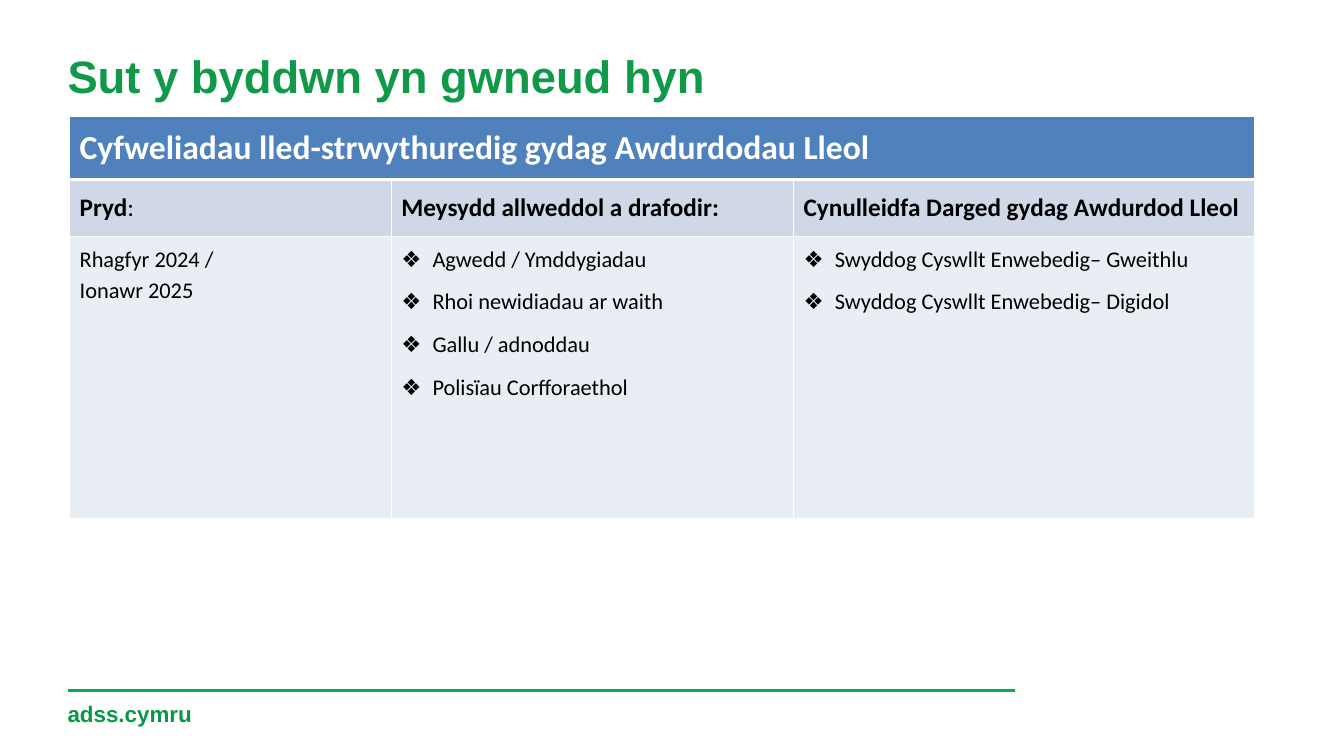
from lxml import etree
from pptx import Presentation
from pptx.dml.color import RGBColor
from pptx.enum.shapes import MSO_CONNECTOR
from pptx.enum.text import MSO_ANCHOR
from pptx.oxml.ns import qn
from pptx.util import Pt

PX = 9144  # 100 px to the inch
STRAIGHT = MSO_CONNECTOR.STRAIGHT
TOP, MIDDLE = MSO_ANCHOR.TOP, MSO_ANCHOR.MIDDLE
COLORS = {
    "title": "109949", "footer": "089948", "rule": "00B050",
    "header": "4F81BD", "heading": "D0D8E8", "body": "E9EDF4",
    "white": "FFFFFF", "black": "000000",
}
COLUMNS = [319, 399, 457]
ROWS = [63, 57, 280]
HEADER = "Cyfweliadau lled-strwythuredig gydag Awdurdodau Lleol"
HEADINGS = ["Pryd:", "Meysydd allweddol a drafodir:",
            "Cynulleidfa Darged gydag Awdurdod Lleol"]
WHEN = "Rhagfyr 2024 /\vIonawr 2025"
TOPICS = ["Agwedd / Ymddygiadau", "Rhoi newidiadau ar waith",
          "Gallu / adnoddau", "Polisïau Corfforaethol"]
AUDIENCE = ["Swyddog Cyswllt Enwebedig– Gweithlu",
            "Swyddog Cyswllt Enwebedig– Digidol"]


def px(n):
    return int(n * PX)


def rgb(name):
    return RGBColor.from_string(COLORS[name])


def style_runs(p, size, color, bold=False, font="Calibri"):
    for r in p.runs:
        r.font.name = font
        r.font.size = Pt(size)
        r.font.bold = bold
        r.font.color.rgb = rgb(color)


def add_label(slide, box, text, size, color):
    tf = slide.shapes.add_textbox(*map(px, box)).text_frame
    tf.word_wrap = True
    tf.margin_left = tf.margin_top = tf.margin_right = tf.margin_bottom = 0
    tf.text = text
    style_runs(tf.paragraphs[0], size, color, bold=True, font="Arial")


def add_footer(slide, x, y):
    line = slide.shapes.add_connector(STRAIGHT, px(x), px(y), px(x + 940), px(y))
    line.line.color.rgb = rgb("rule")
    line.line.width = Pt(1.75)
    etree.SubElement(line._element.spPr, qn("a:effectLst"))
    add_label(slide, (x, y + 10, 311, 40), "adss.cymru", 16, "footer")


def set_borders(cell, top=1, bottom=1):
    """White cell borders, with widths in points."""
    tcPr = cell._tc.get_or_add_tcPr()
    widths = {"lnL": 1, "lnR": 1, "lnT": top, "lnB": bottom}
    for i, (tag, width) in enumerate(widths.items()):
        ln = etree.Element(qn(f"a:{tag}"), w=str(Pt(width)))
        fill = etree.SubElement(ln, qn("a:solidFill"))
        etree.SubElement(fill, qn("a:srgbClr"), val=COLORS["white"])
        tcPr.insert(i, ln)


def set_bullet(p):
    pPr = p._p.get_or_add_pPr()
    pPr.set("marL", str(px(31)))
    pPr.set("indent", str(px(-31)))
    etree.SubElement(pPr, qn("a:buFont"), typeface="Arial")
    etree.SubElement(pPr, qn("a:buChar"), char="❖")


def fill_cell(cell, lines, size, color, fill, bold=False, bullets=False, body=False):
    cell.fill.solid()
    cell.fill.fore_color.rgb = rgb(fill)
    cell.vertical_anchor = TOP if body else MIDDLE
    tf = cell.text_frame
    for i, text in enumerate(lines):
        p = tf.paragraphs[0] if i == 0 else tf.add_paragraph()
        p.text = text
        if body:
            p.line_spacing = 1.15
            p.space_after = Pt(8)
        if bullets:
            set_bullet(p)
        style_runs(p, size, color, bold)


def add_interview_table(slide, x, y):
    shape = slide.shapes.add_table(len(ROWS), len(COLUMNS), px(x), px(y),
                                   px(sum(COLUMNS)), px(sum(ROWS)))
    table = shape.table
    table.horz_banding = False
    for column, width in zip(table.columns, COLUMNS):
        column.width = px(width)
    for row, height in zip(table.rows, ROWS):
        row.height = px(height)

    table.cell(0, 0).merge(table.cell(0, 2))
    fill_cell(table.cell(0, 0), [HEADER], 24, "white", "header", bold=True)
    for c, (heading, lines) in enumerate(zip(HEADINGS, [[WHEN], TOPICS, AUDIENCE])):
        fill_cell(table.cell(1, c), [heading], 18, "black", "heading", bold=True)
        fill_cell(table.cell(2, c), lines, 16, "black", "body",
                  bullets=c > 0, body=True)
        set_borders(table.cell(0, c), bottom=3)
        set_borders(table.cell(1, c), top=3)
        set_borders(table.cell(2, c))

    p = table.cell(1, 0).text_frame.paragraphs[0]
    p.runs[0].text = "Pryd"
    p.add_run().text = ":"
    style_runs(p, 18, "black", bold=True)
    p.runs[1].font.bold = False


def main():
    prs = Presentation()
    prs.slide_width, prs.slide_height = px(1333), px(750)
    slide = prs.slides.add_slide(prs.slide_layouts[6])
    add_footer(slide, 67, 685)
    add_label(slide, (67, 48, 1200, 67), "Sut y byddwn yn gwneud hyn", 32.4, "title")
    add_interview_table(slide, 69, 115)
    prs.save("out.pptx")


if __name__ == "__main__":
    main()
